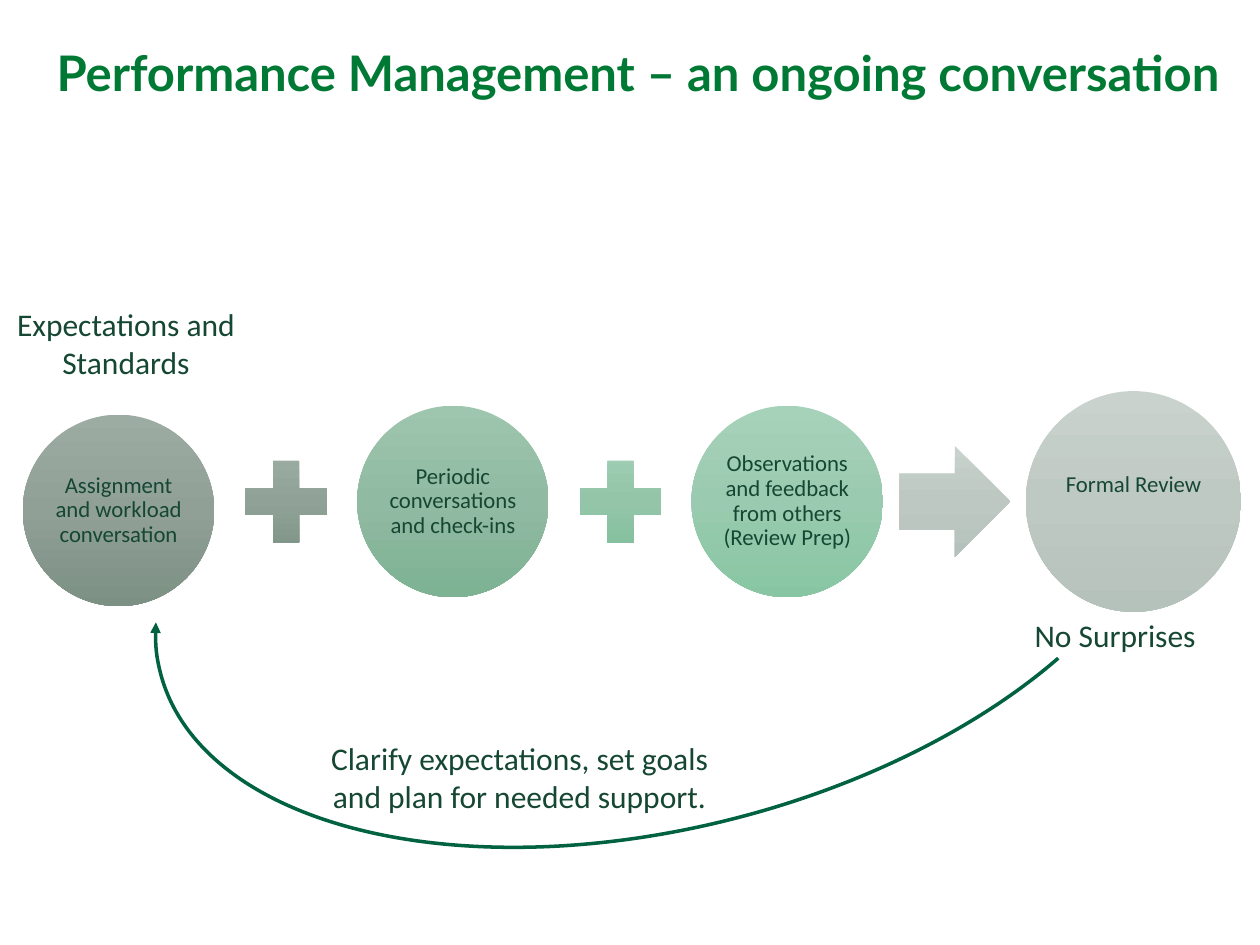
"""Builds the performance management conversation cycle slide."""
from copy import deepcopy

from lxml.etree import SubElement
from pptx import Presentation
from pptx.dml.color import RGBColor
from pptx.enum.shapes import MSO_SHAPE
from pptx.enum.text import MSO_ANCHOR, PP_ALIGN
from pptx.oxml.ns import qn
from pptx.util import Cm, Pt

TITLE_GREEN = RGBColor(0x00, 0x79, 0x35)
TEXT_GREEN = RGBColor(0x15, 0x47, 0x33)
ARC_GREEN = RGBColor(0x00, 0x62, 0x41)
PALE_TOP = RGBColor(0xC9, 0xD2, 0xCD)
PALE_BOTTOM = RGBColor(0xB5, 0xC2, 0xBB)

STEP_LEFT, SYMBOL_LEFT, PITCH = 0.46, 4.65, 6.74
AXIS = 10.11
SYMBOL_SIZE = 2.24
CIRCLE = (3.86, 3.86)

STEPS = [
    ("Assignment and workload conversation", CIRCLE, 0.18, 0.05,
     (RGBColor(0x9D, 0xAC, 0xA3), RGBColor(0x90, 0xA0, 0x97), RGBColor(0x7C, 0x90, 0x84))),
    ("Periodic conversations and check-ins", CIRCLE, 0, 0.05,
     (RGBColor(0x9E, 0xC5, 0xAE), RGBColor(0x91, 0xBA, 0xA2), RGBColor(0x7D, 0xB2, 0x93))),
    ("Observations and feedback from others (Review Prep)", CIRCLE, 0, 0.05,
     (RGBColor(0xA7, 0xD2, 0xBA), RGBColor(0x9A, 0xCA, 0xAF), RGBColor(0x88, 0xC6, 0xA3))),
    ("Formal Review", (4.34, 4.45), 0, 0.7,
     (PALE_TOP, RGBColor(0xBF, 0xC9, 0xC3), PALE_BOTTOM)),
]
SYMBOLS = [
    (MSO_SHAPE.MATH_PLUS,
     (RGBColor(0x9D, 0xAE, 0xA4), RGBColor(0x90, 0xA2, 0x97), RGBColor(0x7C, 0x93, 0x85))),
    (MSO_SHAPE.MATH_PLUS,
     (RGBColor(0xA0, 0xCF, 0xB4), RGBColor(0x94, 0xC5, 0xA9), RGBColor(0x80, 0xBF, 0x9B))),
    (MSO_SHAPE.RIGHT_ARROW, (PALE_TOP, RGBColor(0xBE, 0xC8, 0xC3), PALE_BOTTOM)),
]
NOTES = [
    ("Expectations and Standards", 0, 6.02, 5.08, 1.8),
    ("No Surprises", 19.94, 12.29, 5.08, 1.02),
    ("Clarify expectations, set goals and plan for needed support.", 6.22, 14.78, 8.51, 1.8),
]


class CycleSlide:
    """Holds the text style and the current slide."""

    font, color = "Calibri", TEXT_GREEN

    def __init__(self, slide):
        self.slide = slide

    def add_words(self, frame, words, size, align=PP_ALIGN.CENTER, font=None, color=None,
                  bold=False):
        frame.word_wrap = True
        paragraph = frame.paragraphs[0]
        paragraph.alignment = align
        run = paragraph.add_run()
        run.text = words
        run.font.name = font or self.font
        run.font.size = Pt(size)
        run.font.bold = bold
        run.font.color.rgb = color or self.color
        return paragraph

    def label(self, words, left, top, width, height, size=18, **style):
        box = self.slide.shapes.add_textbox(Cm(left), Cm(top), Cm(width), Cm(height))
        self.add_words(box.text_frame, words, size, **style)

    def gradient_shape(self, kind, left, middle, width, height, colors):
        shape = self.slide.shapes.add_shape(
            kind, Cm(left), Cm(middle - height / 2), Cm(width), Cm(height))
        shape.shadow.inherit = False
        shape.line.fill.background()
        shape.fill.gradient()
        shape.fill.gradient_angle = 270
        stops = shape._element.spPr.find(".//" + qn("a:gsLst"))
        stops.insert(1, deepcopy(stops[0]))
        for stop, position, color in zip(shape.fill.gradient_stops, (0, 0.5, 1), colors):
            stop.position = position
            stop.color.rgb = color
        return shape

    def step(self, words, left, middle, size, bottom_inset, colors):
        circle = self.gradient_shape(MSO_SHAPE.OVAL, left, middle, *size, colors)
        frame = circle.text_frame
        frame.margin_left = frame.margin_right = frame.margin_top = Cm(0.05)
        frame.margin_bottom = Cm(bottom_inset)
        frame.vertical_anchor = MSO_ANCHOR.MIDDLE
        self.add_words(frame, words, 13).line_spacing = 0.9

    def return_arc(self, left, top, width, height, rotation, start, end):
        arc = self.slide.shapes.add_shape(
            MSO_SHAPE.ARC, Cm(left), Cm(top), Cm(width), Cm(height))
        arc.shadow.inherit = False
        arc.rotation = rotation
        arc.adjustments[0], arc.adjustments[1] = start, end
        arc.fill.background()
        arc.line.color.rgb = ARC_GREEN
        arc.line.width = Pt(2)
        outline = arc._element.spPr.find(qn("a:ln"))
        SubElement(outline, qn("a:tailEnd"), type="triangle")


def main():
    deck = Presentation()
    deck.slide_width, deck.slide_height = Cm(25.4), Cm(19.05)
    cycle = CycleSlide(deck.slides.add_slide(deck.slide_layouts[6]))

    cycle.label("Performance Management – an ongoing conversation", 0.89, 0.74, 24.13, 1.45,
                size=28, align=PP_ALIGN.LEFT, font="Lato", color=TITLE_GREEN, bold=True)
    for place, (words, size, drop, bottom_inset, colors) in enumerate(STEPS):
        cycle.step(words, STEP_LEFT + place * PITCH, AXIS + drop, size, bottom_inset, colors)
    for place, (kind, colors) in enumerate(SYMBOLS):
        cycle.gradient_shape(
            kind, SYMBOL_LEFT + place * PITCH, AXIS, SYMBOL_SIZE, SYMBOL_SIZE, colors)
    cycle.return_arc(2.9, 5.21, 21.03, 11.46, rotation=165.5, start=126.53, end=3.37)
    for note in NOTES:
        cycle.label(*note)

    deck.save("out.pptx")


if __name__ == "__main__":
    main()
